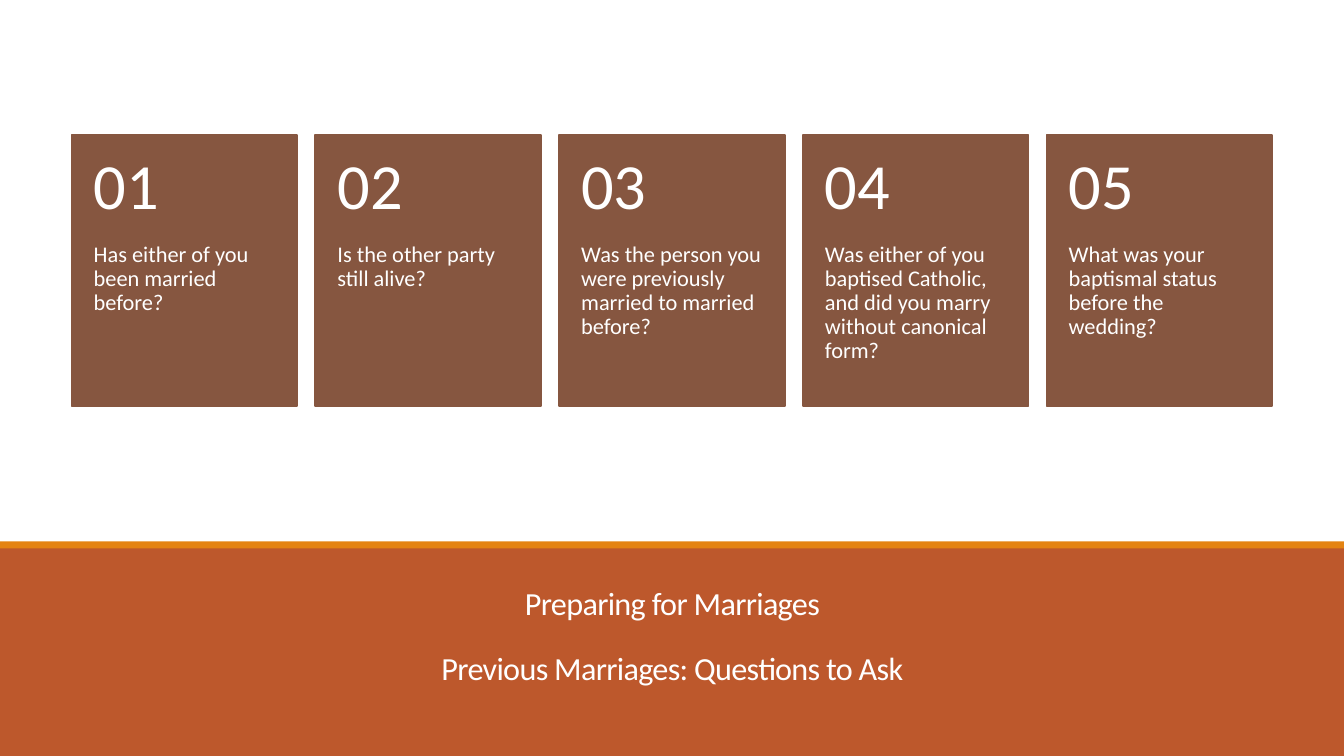
"""Builds the slide of questions to ask about previous marriages."""
from pptx import Presentation
from pptx import util as u
from pptx.dml.color import RGBColor
from pptx.enum import shapes, text

TITLE = ["Preparing for Marriages", "Previous Marriages: Questions to Ask"]
QUESTIONS = [
    "Has either of you been married before?",
    "Is the other party still alive?",
    "Was the person you were previously married to married before?",
    "Was either of you baptised Catholic, and did you marry without canonical form?",
    "What was your baptismal status before the wedding?",
]
THEME = {
    "font": "Calibri", "text": "FFFFFF",
    "band": "BD582C", "rule": "E48312", "card": "865640",
    "title_pt": 23, "number_pt": 46, "question_pt": 16,
}
SLIDE_W, SLIDE_H = 13.33, 7.5
BAND_TOP, RULE_TOP, RULE_H = 5.42, 5.37, 0.07
CARD_LEFT, CARD_TOP, CARD_W, CARD_H = 0.71, 1.34, 2.24, 2.69
CARD_STEP, NUMBER_H = 2.4175, 1.07


def add_rect(s, box, color, line_pt=None):
    sp = s.shapes.add_shape(shapes.MSO_SHAPE.RECTANGLE, *map(u.Inches, box))
    sp.shadow.inherit = False
    sp.fill.solid()
    sp.fill.fore_color.rgb = RGBColor.from_string(color)
    if line_pt:
        sp.line.color.rgb = RGBColor.from_string(color)
        sp.line.width = u.Pt(line_pt)
    else:
        sp.line.fill.background()


def add_text(s, box, lines, size, insets, anchor, spacing, align=text.PP_ALIGN.LEFT):
    tf = s.shapes.add_textbox(*map(u.Inches, box)).text_frame
    tf.word_wrap = True
    tf.vertical_anchor = anchor
    tf.margin_left, tf.margin_top, tf.margin_right, tf.margin_bottom = map(u.Inches, insets)
    tf.text = "\n".join(lines)
    for p in tf.paragraphs:
        p.alignment = align
        p.line_spacing = spacing
        p.font.name = THEME["font"]
        p.font.size = u.Pt(size)
        p.font.color.rgb = RGBColor.from_string(THEME["text"])
    return tf


def add_title(s):
    tf = add_text(s, (1.17, 5.74, 11, 1.13), TITLE, THEME["title_pt"], (0.1, 0.05, 0.1, 0.05),
                  text.MSO_ANCHOR.BOTTOM, 0.85, text.PP_ALIGN.CENTER)
    tf.paragraphs[1].space_before = u.Pt(THEME["title_pt"])
    for p in tf.paragraphs:
        for r in p.runs:
            r.font._element.set("spc", "-50")


def add_card(s, i, question):
    left = CARD_LEFT + i * CARD_STEP
    add_rect(s, (left, CARD_TOP, CARD_W, CARD_H), THEME["card"], 1.25)
    add_text(s, (left, CARD_TOP + NUMBER_H, CARD_W, CARD_H - NUMBER_H), [question],
             THEME["question_pt"], (0.22, 0, 0.22, 0.36), text.MSO_ANCHOR.TOP, 0.9)
    add_text(s, (left, CARD_TOP, CARD_W, NUMBER_H), [f"{i + 1:02}"],
             THEME["number_pt"], (0.22, 0.18, 0.22, 0.18), text.MSO_ANCHOR.MIDDLE, 0.9)


def main():
    prs = Presentation()
    prs.slide_width, prs.slide_height = u.Inches(SLIDE_W), u.Inches(SLIDE_H)
    s = prs.slides.add_slide(prs.slide_layouts[6])
    add_rect(s, (0, BAND_TOP, SLIDE_W, SLIDE_H - BAND_TOP), THEME["band"])
    add_title(s)
    add_rect(s, (0, RULE_TOP, SLIDE_W, RULE_H), THEME["rule"])
    for i, question in enumerate(QUESTIONS):
        add_card(s, i, question)
    prs.save("out.pptx")


if __name__ == "__main__":
    main()
